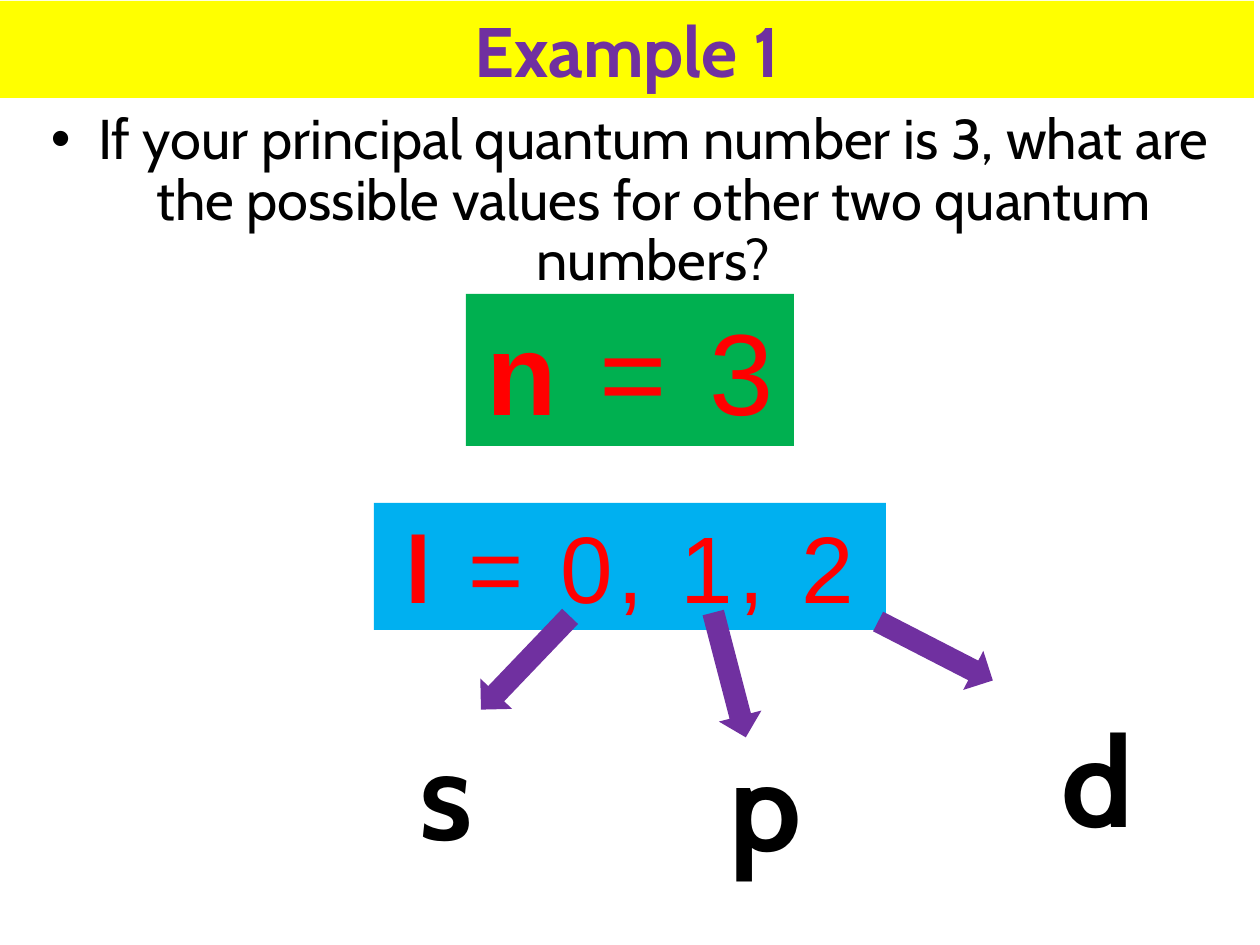
from lxml.etree import SubElement, fromstring
from pptx import Presentation
from pptx.dml.color import RGBColor
from pptx.enum.shapes import MSO_SHAPE
from pptx.enum.text import MSO_ANCHOR, PP_ALIGN
from pptx.oxml.ns import nsdecls, qn
from pptx.util import Pt

PX = 914400 / 126
COLORS = {"yellow": "FFFF00", "purple": "7030A0", "green": "00B050", "blue": "00B0F0",
          "red": "FF0000", "black": "000000", "pale": "F9FCFC"}
SHADOW = (f'<a:effectLst {nsdecls("a")}><a:outerShdw blurRad="25400" dist="12700" dir="2700000">'
          '<a:srgbClr val="000000"><a:alpha val="40000"/></a:srgbClr></a:outerShdw></a:effectLst>')


def add_box(kind, box, fill=None):
    at = [round(v * PX) for v in box]
    if fill is None:
        sp = s.shapes.add_textbox(*at)
    else:
        sp = s.shapes.add_shape(kind, *at)
        sp.shadow.inherit = False
        sp.fill.solid()
        sp.fill.fore_color.rgb = RGBColor.from_string(COLORS[fill])
        sp.line.fill.background()
    sp.text_frame.word_wrap = True
    sp.text_frame.vertical_anchor = MSO_ANCHOR.TOP
    sp.text_frame.paragraphs[0].alignment = PP_ALIGN.CENTER
    return sp


def add_run(p, text, color, outline=None, **fmt):
    r = p.add_run()
    r.text = text
    for name, value in fmt.items():
        setattr(r.font, name, value)
    r.font.color.rgb = RGBColor.from_string(COLORS[color])
    if outline:
        ln = fromstring(f'<a:ln {nsdecls("a")} w="{Pt(outline[1])}"/>')
        fill = SubElement(ln, qn("a:solidFill"))
        SubElement(fill, qn("a:srgbClr"), val=COLORS[outline[0]])
        r.font._element.insert(0, ln)
    return r


prs = Presentation()
prs.slide_width, prs.slide_height = round(1260 * PX), round(945 * PX)
s = prs.slides.add_slide(prs.slide_layouts[6])

title = add_box(MSO_SHAPE.RECTANGLE, (0, 1, 1254, 97), "yellow")
add_run(title.text_frame.paragraphs[0], "Example 1", "purple", ("black", 1),
        name="Cabin", size=Pt(40), bold=True)

question = add_box(None, (0, 105, 1260, 203))
p = question.text_frame.paragraphs[0]
p.line_spacing = 0.9
pPr = p._p.get_or_add_pPr()
pPr.set("marL", "342900")
pPr.set("indent", "-342900")
SubElement(pPr, qn("a:buFont"), typeface="Arial")
SubElement(pPr, qn("a:buChar"), char="•")
add_run(p, "If your principal quantum number is 3, what are the possible values "
        "for other two quantum numbers?", "black", name="Cabin", size=Pt(32))

numbers = [("n ", "= 3", (466, 294, 328, 152), "green", 66),
           ("l ", "= 0, 1, 2", (374, 503, 512, 127), "blue", 54)]
for symbol, values, box, fill, size in numbers:
    sp = add_box(MSO_SHAPE.RECTANGLE, box, fill)
    sp.text_frame.word_wrap = False
    for text, bold in ((symbol, True), (values, False)):
        r = add_run(sp.text_frame.paragraphs[0], text, "red", ("pale", 0.9),
                    name="Arial", size=Pt(size), bold=bold)
        rPr = r.font._element
        rPr.set("spc", "300")
        rPr.insert(2, fromstring(SHADOW))

for left, top, angle in ((871, 629, 27.2), (461, 641, 133.7), (665, 653, 75.4)):
    arrow = add_box(MSO_SHAPE.RIGHT_ARROW, (left, top, 129, 44), "purple")
    arrow.rotation = angle

for letter, left, top in (("s", 343, 725), ("p", 662, 736), ("d", 994, 712)):
    sp = add_box(None, (left, top, 207, 139))
    p = sp.text_frame.paragraphs[0]
    p.line_spacing = 0.9
    add_run(p, letter, "black", name="Cabin", size=Pt(72), bold=True)

prs.save("out.pptx")
